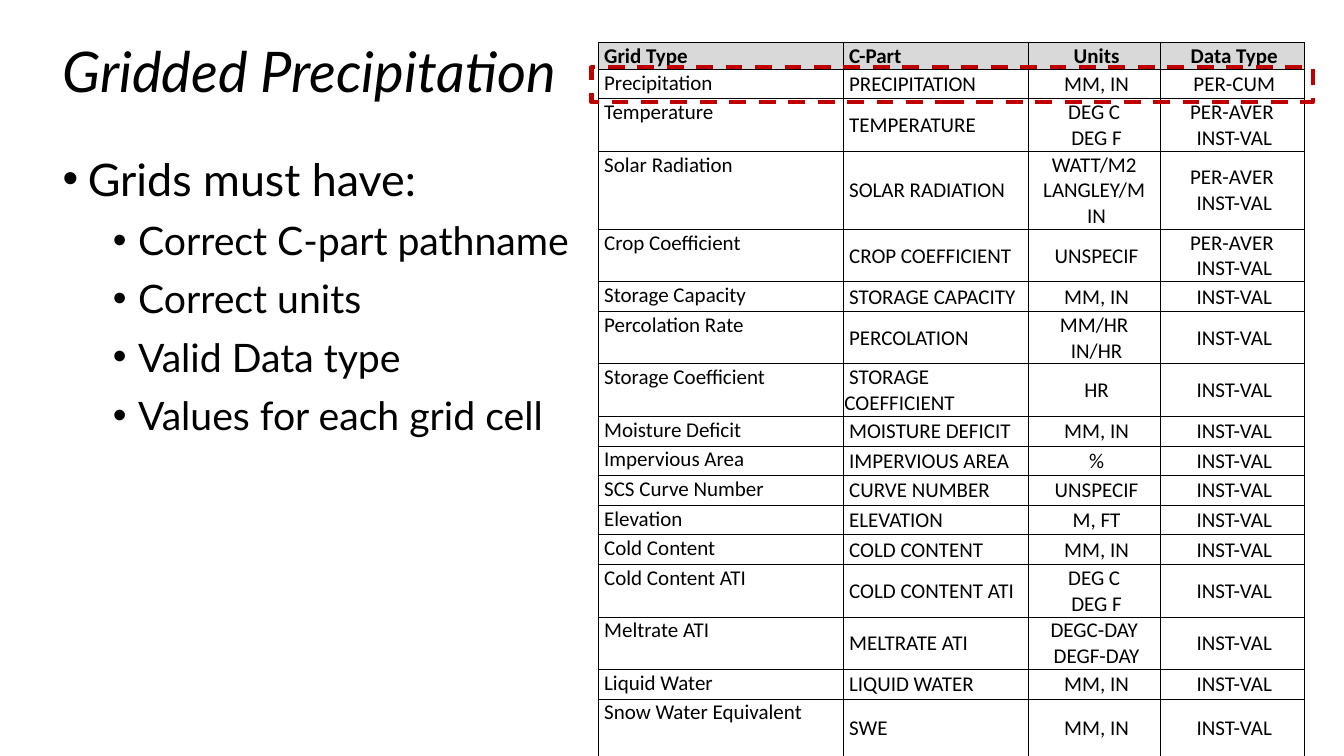
from lxml import etree
from pptx import Presentation
from pptx import util as u
from pptx.dml.color import RGBColor
from pptx.enum import dml, shapes, text
from pptx.oxml.ns import qn

HEADING = "Gridded Precipitation"
REQUIREMENTS = [
    (0, "Grids must have:"),
    (1, "Correct C-part pathname"),
    (1, "Correct units"),
    (1, "Valid Data type"),
    (1, "Values for each grid cell"),
]
GRID_TYPES = [
    ("Grid Type", "C-Part", "Units", "Data Type"),
    ("Precipitation", "PRECIPITATION", "MM, IN", "PER-CUM"),
    ("Temperature", "TEMPERATURE", "DEG C\nDEG F", "PER-AVER\nINST-VAL"),
    ("Solar Radiation", "SOLAR RADIATION", "WATT/M2\nLANGLEY/M\nIN", "PER-AVER\nINST-VAL"),
    ("Crop Coefficient", "CROP COEFFICIENT", "UNSPECIF", "PER-AVER\nINST-VAL"),
    ("Storage Capacity", "STORAGE CAPACITY", "MM, IN", "INST-VAL"),
    ("Percolation Rate", "PERCOLATION", "MM/HR\nIN/HR", "INST-VAL"),
    ("Storage Coefficient", "STORAGE COEFFICIENT", "HR", "INST-VAL"),
    ("Moisture Deficit", "MOISTURE DEFICIT", "MM, IN", "INST-VAL"),
    ("Impervious Area", "IMPERVIOUS AREA", "%", "INST-VAL"),
    ("SCS Curve Number", "CURVE NUMBER", "UNSPECIF", "INST-VAL"),
    ("Elevation", "ELEVATION", "M, FT", "INST-VAL"),
    ("Cold Content", "COLD CONTENT", "MM, IN", "INST-VAL"),
    ("Cold Content ATI", "COLD CONTENT ATI", "DEG C\nDEG F", "INST-VAL"),
    ("Meltrate ATI", "MELTRATE ATI", "DEGC-DAY\nDEGF-DAY", "INST-VAL"),
    ("Liquid Water", "LIQUID WATER", "MM, IN", "INST-VAL"),
    ("Snow Water Equivalent", "SWE", "MM, IN", "INST-VAL"),
]
COLUMN_WIDTHS = (175, 132.25, 93.75, 103)
LINE_HEIGHT, ROW_HEIGHT, LAST_ROW_HEIGHT = 18.5, 21.2, 42
TABLE_LEFT, TABLE_TOP = 427.5, 30.25

BLACK = RGBColor(0, 0, 0)
HEADER_GREY = RGBColor(0xD9, 0xD9, 0xD9)
HIGHLIGHT_RED = RGBColor(0xC0, 0, 0)


def place(part, left, top, width, height):
    part.left, part.top = u.Pt(left), u.Pt(top)
    part.width, part.height = u.Pt(width), u.Pt(height)


def write(paragraph, words, size, face, bold=False, italic=False):
    run = paragraph.add_run()
    run.text = words
    font = run.font
    font.name, font.size, font.bold, font.italic = face, u.Pt(size), bold, italic
    font.color.rgb = BLACK


def add_bullet(paragraph, left):
    properties = paragraph._p.get_or_add_pPr()
    properties.set("marL", str(u.Pt(left)))
    properties.set("indent", str(u.Pt(-18)))
    etree.SubElement(properties, qn("a:buFont")).set("typeface", "Arial")
    etree.SubElement(properties, qn("a:buChar")).set("char", "•")


def add_borders(cell):
    properties = cell._tc.get_or_add_tcPr()
    for position, side in enumerate(("lnL", "lnR", "lnT", "lnB")):
        border = etree.Element(qn("a:" + side), w=str(u.Pt(0.5)))
        solid = etree.SubElement(border, qn("a:solidFill"))
        etree.SubElement(solid, qn("a:srgbClr")).set("val", str(BLACK))
        properties.insert(position, border)


def fill_cell(cell, words, row, column):
    header = row == 0
    if header:
        cell.fill.solid()
        cell.fill.fore_color.rgb = HEADER_GREY
        cell.vertical_anchor = text.MSO_ANCHOR.BOTTOM
    else:
        cell.fill.background()
        cell.vertical_anchor = text.MSO_ANCHOR.MIDDLE if column else text.MSO_ANCHOR.TOP
    add_borders(cell)
    cell.margin_left = cell.margin_right = cell.margin_top = u.Pt(0.7)
    cell.margin_bottom = 0
    lines = words.split("\n")
    for number, line in enumerate(lines):
        paragraph = cell.text_frame.add_paragraph() if number else cell.text_frame.paragraphs[0]
        paragraph.alignment = text.PP_ALIGN.CENTER if column > 1 else text.PP_ALIGN.LEFT
        ending = " " if number < len(lines) - 1 else ""
        write(paragraph, " " + line + ending, 15, "Calibri", bold=header)


def row_height(row):
    if row == 0:
        return LINE_HEIGHT
    if row == len(GRID_TYPES) - 1:
        return LAST_ROW_HEIGHT
    line_count = max(words.count("\n") + 1 for words in GRID_TYPES[row])
    return max(ROW_HEIGHT, LINE_HEIGHT * line_count)


def main():
    deck = Presentation()
    deck.slide_width, deck.slide_height = u.Pt(960), u.Pt(540)
    slide = deck.slides.add_slide(deck.slide_layouts[1])

    heading = slide.shapes.title
    place(heading, 37.5, 1.5, 378, 103)
    heading.text_frame.auto_size = text.MSO_AUTO_SIZE.NONE
    heading.text_frame.vertical_anchor = text.MSO_ANCHOR.MIDDLE
    heading_line = heading.text_frame.paragraphs[0]
    heading_line.alignment = text.PP_ALIGN.LEFT
    heading_line.line_spacing = 0.9
    write(heading_line, HEADING, 40, "Lato", italic=True)

    requirements = slide.placeholders[1]
    place(requirements, 37.5, 104.5, 894, 390)
    frame = requirements.text_frame
    frame.auto_size = text.MSO_AUTO_SIZE.NONE
    for number, (level, words) in enumerate(REQUIREMENTS):
        paragraph = frame.add_paragraph() if number else frame.paragraphs[0]
        paragraph.level = level
        paragraph.space_before = u.Pt(8 * level)
        add_bullet(paragraph, 18 + 36 * level)
        write(paragraph, words, 28 if level else 32, "Lato")

    heights = [row_height(row) for row in range(len(GRID_TYPES))]
    grid = slide.shapes.add_table(
        len(GRID_TYPES), len(COLUMN_WIDTHS), u.Pt(TABLE_LEFT), u.Pt(TABLE_TOP),
        u.Pt(sum(COLUMN_WIDTHS)), u.Pt(sum(heights))).table
    grid.first_row = grid.horz_banding = False
    for column, width in enumerate(COLUMN_WIDTHS):
        grid.columns[column].width = u.Pt(width)
    for row, entries in enumerate(GRID_TYPES):
        grid.rows[row].height = u.Pt(heights[row])
        for column, words in enumerate(entries):
            fill_cell(grid.cell(row, column), words, row, column)

    highlight = slide.shapes.add_shape(
        shapes.MSO_SHAPE.RECTANGLE, u.Pt(422.5), u.Pt(48), u.Pt(515.5), u.Pt(25))
    highlight.shadow.inherit = False
    highlight.fill.background()
    highlight.line.color.rgb = HIGHLIGHT_RED
    highlight.line.width = u.Pt(3)
    highlight.line.dash_style = dml.MSO_LINE.DASH

    deck.save("out.pptx")


if __name__ == "__main__":
    main()
